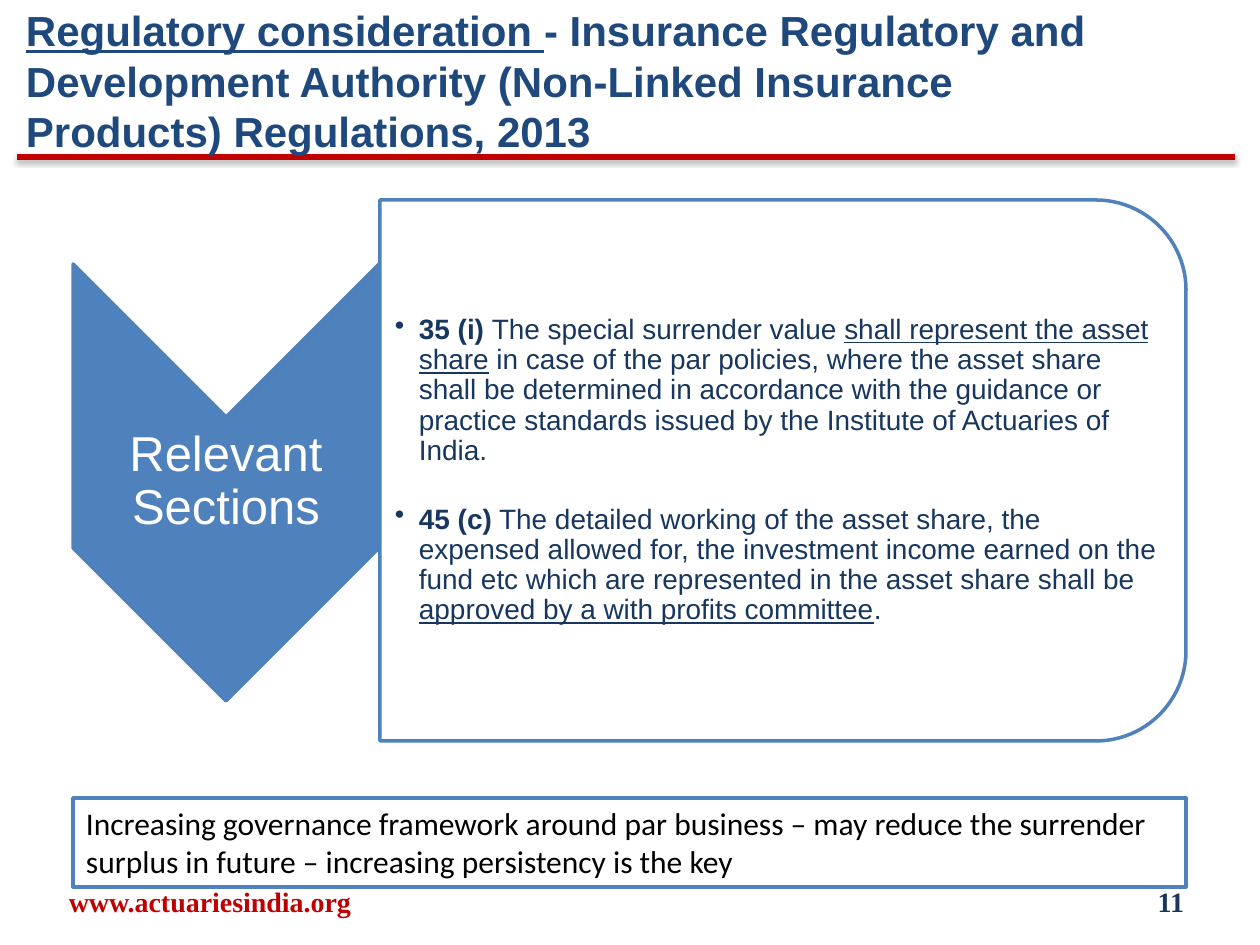
from dataclasses import dataclass
from lxml import etree
from pptx import Presentation
from pptx.dml.color import RGBColor
from pptx.enum import shapes, text
from pptx.oxml import parse_xml
from pptx.oxml.ns import nsdecls, qn
from pptx.util import Pt

PX = 914400 // 126
AUTO = shapes.MSO_SHAPE
ALIGN = text.PP_ALIGN
MID = text.MSO_ANCHOR.MIDDLE


@dataclass(frozen=True)
class Theme:
    navy: str = "1F497D"
    ink: str = "17375E"
    blue: str = "4F81BD"
    red: str = "C00000"
    white: str = "FFFFFF"
    black: str = "000000"
    sans: str = "Arial"
    note: str = "Calibri"
    serif: str = "Times New Roman"
    head: int = 24
    label: int = 28
    body: int = 16
    call: int = 18
    edge: int = 2
    rule: int = 3


T = Theme()


def rgb(hue):
    return RGBColor.from_string(hue)


def emu(*vals):
    return [round(v * PX) for v in vals]


def add_run(para, words, face, size, hue, bold=False, under=False):
    run = para.add_run()
    run.text = words
    font = run.font
    font.name, font.size = face, Pt(size)
    font.bold, font.underline = bold, under
    font.color.rgb = rgb(hue)


def set_frame(shape, pads=(13, 6, 13, 6), anchor=MID):
    frame = shape.text_frame
    frame.word_wrap = True
    frame.vertical_anchor = anchor
    (frame.margin_left, frame.margin_top,
     frame.margin_right, frame.margin_bottom) = emu(*pads)
    return frame


def add_text(slide, box, **kw):
    return set_frame(slide.shapes.add_textbox(*emu(*box)), **kw)


def add_form(slide, kind, box, fill, turn=False):
    """Draw a preset in box; a turned one swaps its sides about the centre."""
    x, y, w, h = box
    if turn:
        x, y, w, h = x + (w - h) / 2, y + (h - w) / 2, h, w
    form = slide.shapes.add_shape(kind, *emu(x, y, w, h))
    form.rotation = 90 if turn else 0
    form.shadow.inherit = False
    form.fill.solid()
    form.fill.fore_color.rgb = rgb(fill)
    form.line.color.rgb = rgb(T.blue)
    form.line.width = Pt(T.edge)
    return form


def add_head(slide, box):
    x, y, w, h = box
    # Red rule with a soft shadow
    base = y + h - 2
    rule = slide.shapes.add_connector(
        shapes.MSO_CONNECTOR.STRAIGHT, *emu(x + 4, base, x + 1222, base))
    rule.line.color.rgb = rgb(T.red)
    rule.line.width = Pt(T.rule)
    rule.element.spPr.append(parse_xml(
        f'<a:effectLst {nsdecls("a")}><a:outerShdw blurRad="{Pt(3.1)}" '
        f'dist="{Pt(1.6)}" dir="5400000" rotWithShape="0">'
        f'<a:srgbClr val="{T.black}"><a:alpha val="38000"/></a:srgbClr>'
        '</a:outerShdw></a:effectLst>'))
    # Title
    para = add_text(slide, box).paragraphs[0]
    style = (T.sans, T.head, T.navy, True)
    add_run(para, "Regulatory consideration ", *style, under=True)
    add_run(para, "- Insurance Regulatory and Development Authority "
            "(Non-Linked Insurance Products) Regulations, 2013", *style)


def add_arrow(slide, box, words):
    x, y, w, h = box
    add_form(slide, AUTO.CHEVRON, box, T.blue, turn=True)
    # Label sits between the notch and the point
    frame = add_text(slide, (x, y + w // 2, w, h - w), pads=(2, 2, 2, 2))
    para = frame.paragraphs[0]
    para.alignment, para.line_spacing = ALIGN.CENTER, 0.9
    add_run(para, words, T.sans, T.label, T.white)


def add_panel(slide, box, items):
    x, y, w, h = box
    card = add_form(slide, AUTO.ROUND_2_SAME_RECTANGLE, box, T.white, turn=True)
    tint = card.element.spPr.find(qn("a:solidFill"))[0]
    etree.SubElement(tint, qn("a:alpha")).set("val", "90000")
    # Bulleted clauses
    frame = add_text(slide, (x, y + 26, w - 26, h - 52), pads=(15, 1, 1, 1))
    for i, item in enumerate(items):
        para = frame.add_paragraph() if i else frame.paragraphs[0]
        props = para._p.get_or_add_pPr()
        indent, = emu(24)
        props.set("marL", str(indent))
        props.set("indent", str(-indent))
        etree.SubElement(props, qn("a:buChar")).set("char", "•")
        para.line_spacing = 0.9
        if i:
            para.space_before = Pt(22)
        for words, bold, under in item:
            add_run(para, words, T.sans, T.body, T.ink, bold, under)


def add_note(slide, box, words):
    form = add_form(slide, AUTO.RECTANGLE, box, T.white)
    para = set_frame(form, anchor=text.MSO_ANCHOR.TOP).paragraphs[0]
    para.alignment = ALIGN.LEFT
    add_run(para, words, T.note, T.call, T.black)


def add_foot(slide, box):
    x, y, w, h = box
    parts = (
        (x, 400, "www.actuariesindia.org", T.red, ALIGN.CENTER),
        (x + w - 294, 294, "11", T.ink, ALIGN.RIGHT),
    )
    for left, wide, words, hue, side in parts:
        para = add_text(slide, (left, y, wide, h)).paragraphs[0]
        para.alignment = side
        add_run(para, words, T.serif, T.body, hue, bold=True)


def main():
    deck = Presentation()
    deck.slide_width, deck.slide_height = emu(1260, 945)
    slide = deck.slides.add_slide(deck.slide_layouts[6])
    clauses = (
        (("35 (i) ", True, False),
         ("The special surrender value ", False, False),
         ("shall represent the asset share", False, True),
         (" in case of the par policies, where the asset share shall be "
          "determined in accordance with the guidance or practice standards "
          "issued by the Institute of Actuaries of India.", False, False)),
        (("45 (c)", True, False),
         (" The detailed working of the asset share, the expensed allowed "
          "for, the investment income earned on the fund etc which are "
          "represented in the asset share shall be ", False, False),
         ("approved by a with profits committee", False, True),
         (".", False, False)),
    )
    add_head(slide, (13, 2, 1134, 157))
    add_foot(slide, (10, 876, 1187, 50))
    add_arrow(slide, (73, 264, 306, 437), "Relevant Sections")
    add_panel(slide, (380, 200, 806, 541), clauses)
    add_note(slide, (73, 798, 1113, 89),
             "Increasing governance framework around par business – may reduce "
             "the surrender surplus in future – increasing persistency is the key")
    deck.save("out.pptx")


if __name__ == "__main__":
    main()
